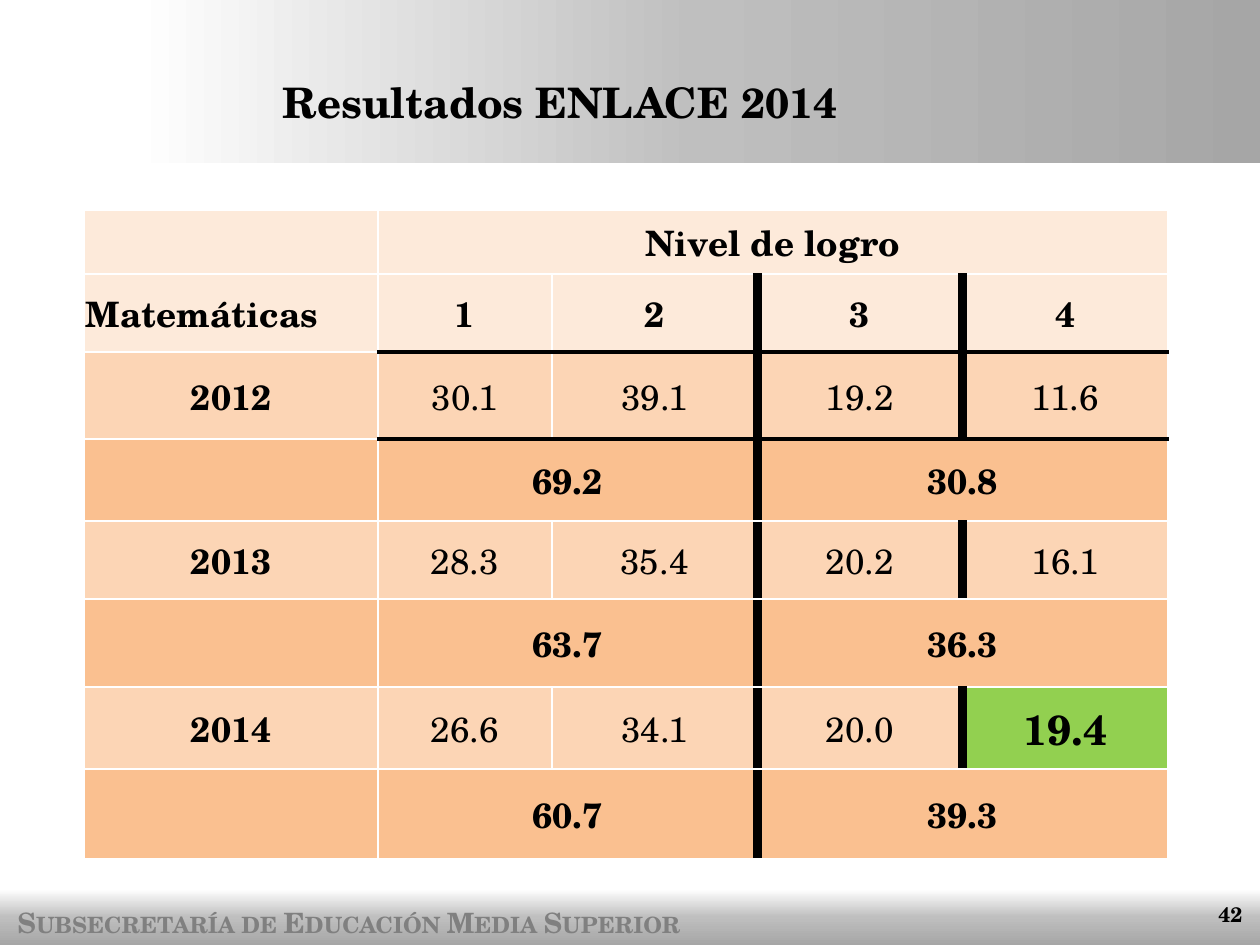
from copy import deepcopy
from dataclasses import dataclass

from lxml import etree
from pptx import Presentation
from pptx.dml.color import RGBColor
from pptx.enum.shapes import MSO_SHAPE
from pptx.enum.text import MSO_ANCHOR, PP_ALIGN
from pptx.oxml.ns import qn
from pptx.util import Inches, Pt

RECTANGLE = MSO_SHAPE.RECTANGLE
TOP, MIDDLE = MSO_ANCHOR.TOP, MSO_ANCHOR.MIDDLE
LEFT, CENTER, RIGHT = PP_ALIGN.LEFT, PP_ALIGN.CENTER, PP_ALIGN.RIGHT


@dataclass(frozen=True)
class Theme:
    font: str = "TeX Gyre Schola"
    ink: str = "000000"
    muted: str = "808080"
    rule: str = "FFFFFF"
    header: str = "FDEADA"
    year: str = "FCD5B5"
    total: str = "FAC090"
    highlight: str = "92D050"
    band: tuple = ((0, "FFFFFF"), (0.5, "BFBFBF"), (1, "A6A6A6"))
    title_size: int = 24
    table_size: int = 20
    footer_size: int = 16
    number_size: int = 12
    thin: float = 1
    medium: float = 2.25
    thick: float = 6


THEME = Theme()
WIDTH, HEIGHT = Inches(10), Inches(7.5)
TABLE_LEFT, TABLE_TOP = 0.067, 0.222
COLUMN_WIDTHS = (2.33, 1.38, 1.63, 1.63, 1.63)
ROW_HEIGHTS = (0.51, 0.62, 0.69, 0.65, 0.62, 0.7, 0.65, 0.71)
# None continues the merged cell on its left.
RESULTS = (
    ("", "Nivel de logro", None, None, None),
    ("Matemáticas", "1", "2", "3", "4"),
    ("2012", "30.1", "39.1", "19.2", "11.6"),
    ("", "69.2", None, "30.8", None),
    ("2013", "28.3", "35.4", "20.2", "16.1"),
    ("", "63.7", None, "36.3", None),
    ("2014", "26.6", "34.1", "20.0", "19.4"),
    ("", "60.7", None, "39.3", None),
)
YEAR_ROWS = (2, 4, 6)
BEST_RESULT = (6, 4)


def place(left, top, width, height):
    """Turn shares of the slide into lengths."""
    return (int(left * WIDTH), int(top * HEIGHT),
            int(width * WIDTH), int(height * HEIGHT))


def style_text(frame, text, size, color=THEME.ink, bold=True, align=LEFT):
    frame.text = text
    paragraph = frame.paragraphs[0]
    paragraph.alignment = align
    for run in paragraph.runs:
        run.font.name = THEME.font
        run.font.size = Pt(size)
        run.font.bold = bold
        run.font.color.rgb = RGBColor.from_string(color)


def add_label(slide, box, text, size, anchor=MIDDLE, **style):
    frame = slide.shapes.add_textbox(*place(*box)).text_frame
    frame.word_wrap = True
    frame.vertical_anchor = anchor
    style_text(frame, text, size, **style)
    return frame


def add_band(slide, box, angle):
    band = slide.shapes.add_shape(RECTANGLE, *place(*box))
    band.shadow.inherit = False
    band.line.fill.background()
    band.fill.gradient()
    band.fill.gradient_angle = angle
    stop_list = next(band._element.iter(qn("a:gsLst")))
    stop_list.append(deepcopy(stop_list[0]))
    for stop, (position, color) in zip(band.fill.gradient_stops, THEME.band):
        stop.position = position
        stop.color.rgb = RGBColor.from_string(color)


def vertical_rule(row, boundary):
    """Heavy rules set levels 3 and 4 apart, except inside merged cells."""
    splits_levels = boundary == 3 or (boundary == 4 and RESULTS[row][4])
    if row > 0 and splits_levels:
        return THEME.ink, THEME.thick
    return THEME.rule, THEME.thin


def horizontal_rule(boundary, column):
    """Black rules enclose the 2012 results."""
    if column > 0 and boundary in (2, 3):
        return THEME.ink, THEME.medium
    return THEME.rule, THEME.thin


def set_borders(cell, row, column, span):
    properties = cell._tc.get_or_add_tcPr()
    rules = {
        "a:lnL": vertical_rule(row, column),
        "a:lnR": vertical_rule(row, column + span),
        "a:lnT": horizontal_rule(row, column),
        "a:lnB": horizontal_rule(row + 1, column),
    }
    for tag, (color, width) in rules.items():
        line = etree.SubElement(properties, qn(tag), w=str(Pt(width)))
        fill = etree.SubElement(line, qn("a:solidFill"))
        etree.SubElement(fill, qn("a:srgbClr"), val=color)


def cell_fill(row, column):
    if (row, column) == BEST_RESULT:
        return THEME.highlight
    if row < 2:
        return THEME.header
    return THEME.year if row in YEAR_ROWS else THEME.total


def span_of(row, column):
    """Count the columns that the cell covers."""
    span = 1
    for value in RESULTS[row][column + 1:]:
        if value is not None:
            break
        span += 1
    return span


def fill_cell(table, row, column, text):
    cell = table.cell(row, column)
    span = 1 if text is None else span_of(row, column)
    set_borders(cell, row, column, span)
    cell.fill.solid()
    cell.fill.fore_color.rgb = RGBColor.from_string(cell_fill(row, column))
    if span > 1:
        cell.merge(table.cell(row, column + span - 1))
    if text:
        cell.margin_left = cell.margin_right = cell.margin_top = Inches(0.01)
        cell.margin_bottom = 0
        cell.vertical_anchor = MIDDLE
        best = (row, column) == BEST_RESULT
        style_text(
            cell.text_frame, text,
            THEME.title_size if best else THEME.table_size,
            bold=best or column == 0 or row not in YEAR_ROWS,
            align=LEFT if (row, column) == (1, 0) else CENTER,
        )


def add_results_table(slide):
    box = place(TABLE_LEFT, TABLE_TOP, sum(COLUMN_WIDTHS) / 10, sum(ROW_HEIGHTS) / 7.5)
    table = slide.shapes.add_table(len(ROW_HEIGHTS), len(COLUMN_WIDTHS), *box).table
    table.first_row = table.horz_banding = False
    for column, width in zip(table.columns, COLUMN_WIDTHS):
        column.width = Inches(width)
    for row, height in zip(table.rows, ROW_HEIGHTS):
        row.height = Inches(height)
    for row, values in enumerate(RESULTS):
        for column, text in enumerate(values):
            fill_cell(table, row, column, text)


def main():
    presentation = Presentation()
    presentation.slide_width, presentation.slide_height = WIDTH, HEIGHT
    slide = presentation.slides.add_slide(presentation.slide_layouts[6])

    add_band(slide, (0, 0.941, 1, 0.059), angle=270)
    footer = add_label(slide, (0.004, 0.952, 0.646, 0.049),
                       "Subsecretaría de Educación Media Superior",
                       THEME.footer_size, anchor=TOP, color=THEME.muted)
    footer.paragraphs[0].runs[0].font._element.set("cap", "small")
    add_band(slide, (0.106, 0, 0.894, 0.173), angle=0)
    add_label(slide, (0.067, 0, 0.755, 0.216), "Resultados ENLACE 2014",
              THEME.title_size, align=CENTER)
    add_results_table(slide)
    add_label(slide, (0.763, 0.941, 0.233, 0.053), "42",
              THEME.number_size, align=RIGHT)

    presentation.save("out.pptx")


if __name__ == "__main__":
    main()
